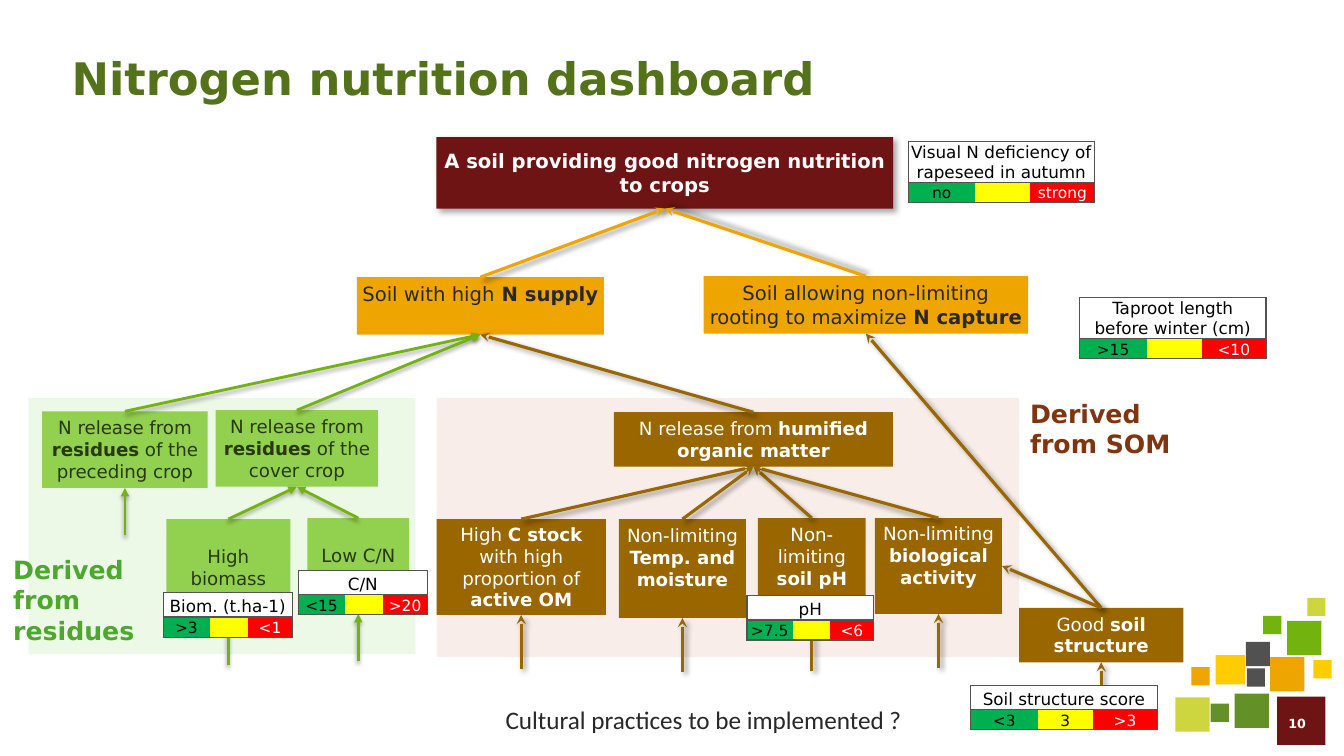
"""Build the nitrogen nutrition dashboard slide."""
from dataclasses import dataclass
from typing import Any

from lxml import etree
from pptx import Presentation
from pptx import util as u
from pptx.dml import color
from pptx.enum import shapes, text
from pptx.oxml import ns

Pt = u.Pt
SANS = "DejaVu Sans"
LEFT, CENTER = text.PP_ALIGN.LEFT, text.PP_ALIGN.CENTER
TOP, MIDDLE, BOTTOM = text.MSO_ANCHOR.TOP, text.MSO_ANCHOR.MIDDLE, text.MSO_ANCHOR.BOTTOM
WHITE, BLACK, DARK, INK = "FFFFFF", "000000", "282828", "29390D"
BROWN, GOLD, LIME, WINE, GREEN = "996600", "EFA500", "92D050", "6E1415", "73B310"
MOSS, PEAR, GREY, YELLOW = "639027", "CDD63E", "515151", "FFCC00"
BORDER = "535353"
TOP_SITE, BOTTOM_SITE, RIGHT_SITE = 0, 2, 3


@dataclass
class Box:
    x: float
    y: float
    w: float
    h: float
    words: str = ""
    fill: str = ""
    ink: str = WHITE
    size: float = 13
    bold: bool = False
    align: Any = CENTER
    anchor: Any = TOP
    inset: float = 3.6
    top: float = 3.6
    font: str = SANS


@dataclass
class ArrowStyle:
    ink: str
    width: float
    head: str
    alpha: int
    blur: float
    dist: float
    angle: int


@dataclass
class Link:
    child: str
    parent: str
    style: str
    site: int = BOTTOM_SITE


@dataclass
class Gauge:
    x: float
    y: float
    w: float
    title: str
    good: str
    fair: str
    poor: str
    title_h: float = 17.3


SQUARES = [
    (912.2, 497.5, 34.6, WINE), (839.5, 498.2, 24.5, PEAR), (907.2, 469.4, 24.5, GOLD),
    (882, 495.4, 24.5, MOSS), (919.4, 443.5, 24.5, GREEN), (889.9, 458.6, 17.3, GREY),
    (868.3, 468, 20.9, YELLOW), (933.8, 427, 13, PEAR), (851, 476.6, 13, GOLD),
    (864.7, 502.6, 13, MOSS), (902.2, 439.9, 13, GREEN), (890.6, 477.4, 13, GREY),
    (938.2, 471.6, 13, YELLOW),
]
PANELS = [Box(311.8, 284.4, 416.2, 185, fill="F8EDE8"), Box(20.2, 284.4, 276.5, 182.9, fill="ECF9E7")]
NODES = {
    "goal": Box(311.8, 97.9, 326.2, 51.1, "A soil providing good nitrogen nutrition to crops",
                WINE, size=14, bold=True, anchor=MIDDLE),
    "supply": Box(254.9, 198, 176.4, 41, "Soil with high* N supply*", GOLD, DARK, 14),
    "capture": Box(502.6, 197.3, 231.8, 41,
                   "Soil allowing non-limiting rooting to maximize *N capture*", GOLD, DARK, 14),
    "preceding": Box(30.2, 293.8, 118.1, 54.7, "N release from *residues* of the preceding crop", LIME, INK),
    "cover": Box(154.1, 293, 115.9, 54.7, "N release from *residues* of the cover crop", LIME, INK),
    "humified": Box(438.5, 294.5, 199.4, 38.9, "N release from *humified organic matter*", BROWN),
    "biomass": Box(118.8, 370.8, 88.6, 70.6, "High biomass", LIME, INK, inset=2.9, top=18.7),
    "ratio": Box(219.6, 370.1, 72.7, 68.5, "Low C/N", LIME, INK, top=18.7),
    "stock": Box(311.8, 370.8, 121, 68.4, "High *C stock *with high proportion of *active OM*",
                 BROWN, inset=2.9, top=2.9),
    "climate": Box(442.1, 370.8, 90.7, 70.6, "Non-limiting *Temp. and moisture*", BROWN),
    "acidity": Box(541.4, 370.1, 77, 70.6, "Non-limiting\n*soil pH*", BROWN),
    "biology": Box(625, 370.1, 90.7, 68.4, "Non-limiting *biological activity*", BROWN, inset=2.9, top=2.9),
    "structure": Box(727.9, 434.2, 117.4, 38.9, "Good *soil structure*", BROWN),
}
LABELS = [
    Box(47.5, 10.1, 862.6, 90, "Nitrogen nutrition dashboard", "", "53721A", 32, True, LEFT, MIDDLE),
    Box(5.8, 392.4, 128.9, 72.7, "Derived from residues", "", "4EA72E", 18, True, LEFT),
    Box(732.2, 280.8, 133.9, 51.1, "Derived from SOM", "", "80350E", 18, True, LEFT),
    Box(349.9, 499.7, 305.3, 28.8, "Cultural practices to be implemented ?", "", DARK, 18, font="Calibri"),
    Box(911.6, 507.6, 30, 18, "10", size=9, bold=True, anchor=MIDDLE),
]
STYLES = {
    "gold": ArrowStyle(GOLD, 2.25, "stealth", 40, 4, 3, 45),
    "gold_up": ArrowStyle(GOLD, 2.25, "stealth", 40, 4, 3, 315),
    "brown": ArrowStyle(BROWN, 2.25, "stealth", 40, 4, 3, 45),
    "green": ArrowStyle(GREEN, 2, "triangle", 35, 3, 1.8, 90),
}
LINKS = [
    Link("supply", "goal", "gold"), Link("capture", "goal", "gold_up"),
    Link("humified", "supply", "brown"), Link("structure", "capture", "brown"),
    Link("structure", "biology", "brown", RIGHT_SITE),
    *(Link(n, "humified", "brown") for n in ("stock", "climate", "acidity", "biology")),
    *(Link(n, "supply", "green") for n in ("preceding", "cover")),
    *(Link(n, "cover", "green") for n in ("biomass", "ratio")),
]
INPUTS = {
    "brown": (38.4, ("stock", "climate", "acidity", "biology", "structure")),
    "green": (33.8, ("preceding", "biomass", "ratio")),
}
GAUGES = [
    Gauge(648.7, 100.8, 133.2, "Visual N deficiency of rapeseed in autumn", "no", "", "strong", 29.5),
    Gauge(771.1, 212.4, 133.2, "Taproot length\nbefore winter (cm)", ">15", "", "<10", 29.5),
    Gauge(213.1, 407.5, 92.2, "C/N", "<15", "", ">20"),
    Gauge(116.6, 423.4, 92.2, "Biom. (t.ha-1)", ">3", "", "<1"),
    Gauge(693.4, 489.6, 133.2, "Soil structure score", "<3", "3", ">3"),
    Gauge(533.5, 425.5, 90.7, "pH", ">7.5", "", "<6"),
]
GAUGE_SHARES = (0.36, 0.295, 0.345)


def rgb(value: str) -> color.RGBColor:
    """Turn a hex string into a colour."""
    return color.RGBColor.from_string(value)


def add_xml(parent: Any, tag: str, **attrs: Any) -> Any:
    """Append a DrawingML element with attributes."""
    return etree.SubElement(parent, ns.qn(tag), {k: str(v) for k, v in attrs.items()})


def write(tf: Any, words: str, size: float, ink: str, bold: bool = False,
          align: Any = CENTER, font: str = SANS) -> None:
    """Write paragraphs whose starred parts are bold."""
    for i, line in enumerate(words.split("\n")):
        p = tf.add_paragraph() if i else tf.paragraphs[0]
        p.alignment = align
        for j, part in enumerate(line.split("*")):
            if part:
                r = p.add_run()
                r.text = part
                r.font.color.rgb = rgb(ink)
                fmt = {"size": Pt(size), "name": font, "bold": bold or j % 2 == 1}
                for key, value in fmt.items():
                    setattr(r.font, key, value)
        if not line:
            add_xml(p._p, "a:endParaRPr", sz=int(size * 100))


def add_shadow(sp: Any, ink: str, alpha: int, blur: float, dist: float, angle: int) -> None:
    """Give a shape an outer shadow."""
    effects = add_xml(sp._element.spPr, "a:effectLst")
    shadow = add_xml(effects, "a:outerShdw", blurRad=Pt(blur), dist=Pt(dist),
                     dir=angle * 60000, rotWithShape=0)
    add_xml(add_xml(shadow, "a:srgbClr", val=ink), "a:alpha", val=alpha * 1000)


def add_box(s: Any, box: Box, shaded: bool = False) -> Any:
    """Draw a filled rectangle or a plain text box."""
    frame = [Pt(v) for v in (box.x, box.y, box.w, box.h)]
    if box.fill:
        sp = s.shapes.add_shape(shapes.MSO_SHAPE.RECTANGLE, *frame)
        sp.fill.solid()
        sp.fill.fore_color.rgb = rgb(box.fill)
        sp.line.fill.background()
        if shaded:
            add_shadow(sp, "2A2A2A", 40, 4, 3, 45)
        else:
            sp.shadow.inherit = False
    else:
        sp = s.shapes.add_textbox(*frame)
    if box.words:
        tf = sp.text_frame
        fmt = {"word_wrap": True, "vertical_anchor": box.anchor, "margin_left": Pt(box.inset),
               "margin_right": Pt(box.inset), "margin_top": Pt(box.top), "margin_bottom": Pt(3.6)}
        for key, value in fmt.items():
            setattr(tf, key, value)
        write(tf, box.words, box.size, box.ink, box.bold, box.align, box.font)
    return sp


def add_arrow(s: Any, style: ArrowStyle, x: int = 0, y: int = 0) -> Any:
    """Draw an arrow that is still to be attached."""
    cxn = s.shapes.add_connector(shapes.MSO_CONNECTOR.STRAIGHT, x, y, x, y)
    cxn.line.color.rgb = rgb(style.ink)
    cxn.line.width = Pt(style.width)
    add_xml(cxn.line._get_or_add_ln(), "a:tailEnd", type=style.head)
    add_shadow(cxn, BLACK, style.alpha, style.blur, style.dist, style.angle)
    return cxn


def add_gauge(s: Any, g: Gauge) -> None:
    """Draw an indicator table with a three-colour scale."""
    tbl = s.shapes.add_table(2, 3, Pt(g.x), Pt(g.y), Pt(g.w), Pt(g.title_h + 14.4)).table
    tbl.first_row = tbl.horz_banding = False
    for row, height in zip(tbl.rows, (g.title_h, 14.4)):
        row.height = Pt(height)
    for col, share in zip(tbl.columns, GAUGE_SHARES):
        col.width = Pt(round(g.w * share, 2))
    tbl.cell(0, 0).merge(tbl.cell(0, 2))
    rows = [[(g.title, WHITE, BLACK), ("", WHITE, BLACK), ("", WHITE, BLACK)],
            [(g.good, "00B050", BLACK), (g.fair, "FFFF00", BLACK), (g.poor, "FF0000", WHITE)]]
    for i, row in enumerate(rows):
        for j, (words, fill, ink) in enumerate(row):
            cell = tbl.cell(i, j)
            fmt = {"vertical_anchor": BOTTOM, "margin_left": Pt(0.7), "margin_right": Pt(0.7),
                   "margin_top": Pt(0.7), "margin_bottom": 0}
            for key, value in fmt.items():
                setattr(cell, key, value)
            write(cell.text_frame, words, 11 if i else 12, ink)
            tc_pr = cell._tc.get_or_add_tcPr()
            drawn = ("LTB", "TB", "RTB")[j] if i else "LRTB"
            for side in "LRTB":
                ln = add_xml(tc_pr, f"a:ln{side}", w=Pt(1))
                if side in drawn:
                    add_xml(add_xml(ln, "a:solidFill"), "a:srgbClr", val=BORDER)
                else:
                    add_xml(ln, "a:noFill")
            cell.fill.solid()
            cell.fill.fore_color.rgb = rgb(fill)


def main() -> None:
    """Assemble and save the slide."""
    prs = Presentation()
    prs.slide_width, prs.slide_height = Pt(960), Pt(540)
    s = prs.slides.add_slide(prs.slide_layouts[6])
    for x, y, side, fill in SQUARES:
        add_box(s, Box(x, y, side, side, fill=fill))
    for panel in PANELS:
        add_box(s, panel)
    nodes = {name: add_box(s, box, name == "goal") for name, box in NODES.items()}
    for link in LINKS:
        cxn = add_arrow(s, STYLES[link.style])
        cxn.begin_connect(nodes[link.child], TOP_SITE)
        cxn.end_connect(nodes[link.parent], link.site)
    for style, (drop, names) in INPUTS.items():
        for name in names:
            sp = nodes[name]
            cxn = add_arrow(s, STYLES[style], sp.left + sp.width // 2, sp.top + sp.height + Pt(drop))
            cxn.end_connect(sp, BOTTOM_SITE)
    for label in LABELS:
        add_box(s, label)
    for gauge in GAUGES:
        add_gauge(s, gauge)
    prs.save("out.pptx")


if __name__ == "__main__":
    main()
